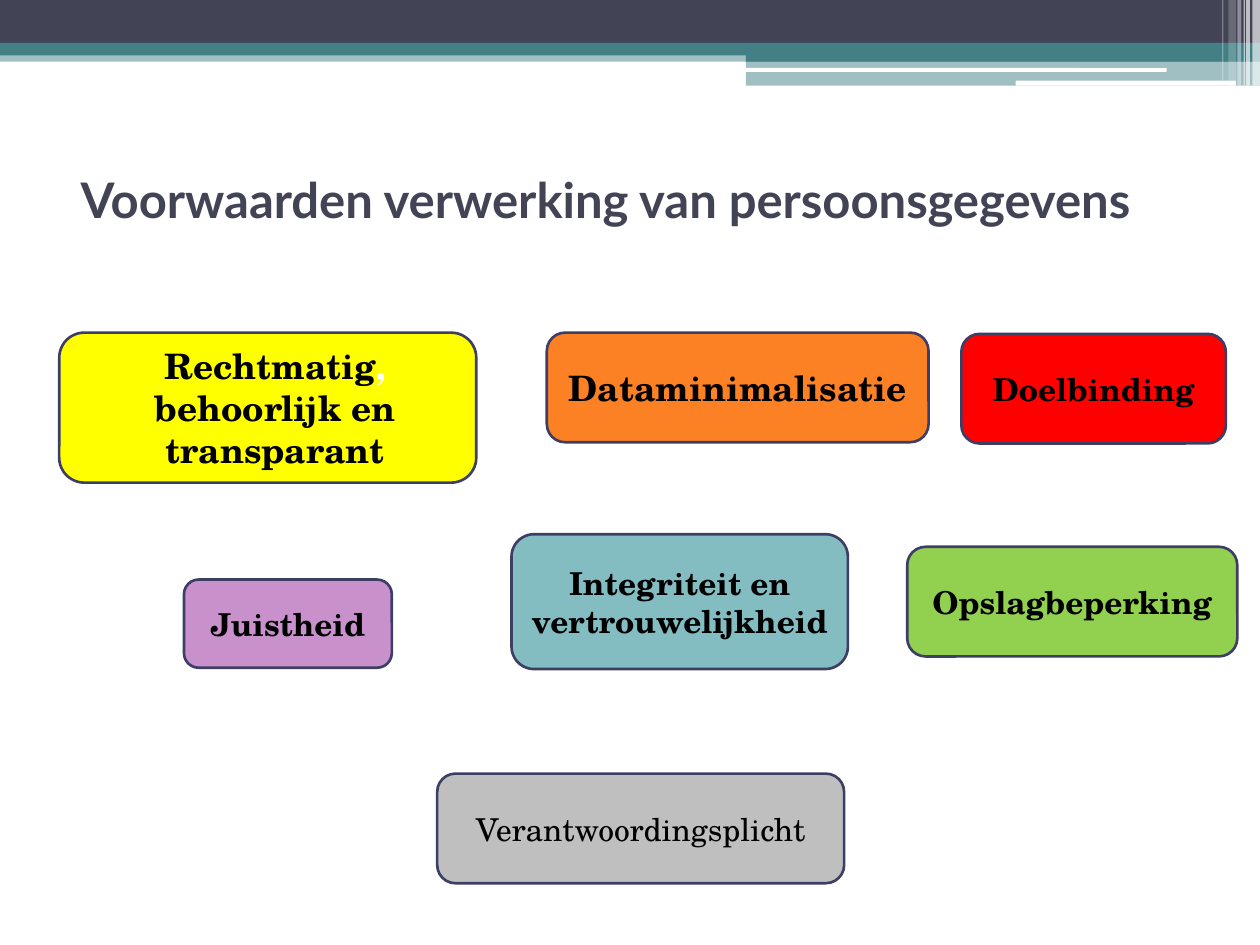
import lxml.etree
import pptx
import pptx.dml.color
import pptx.enum.shapes
import pptx.enum.text
import pptx.oxml.ns
import pptx.util

Inches = pptx.util.Inches
Shapes = pptx.enum.shapes.MSO_SHAPE
qualified = pptx.oxml.ns.qn

THEME = {
    "navy": "424456", "teal": "438086", "white": "FFFFFF", "black": "000000",
    "outline": "3D3E66", "outline_width": 1.5,
    "title_font": "Lato", "body_font": "TeX Gyre Schola",
    "title_size": 28, "large": 20, "medium": 18,
}

TITLE = "Voorwaarden verwerking van persoonsgegevens"
TITLE_BOX = (0.54, 0.99, 9, 1.17)

BANDS = [
    ((0, 0.4, 10, 0.09), "teal", 50),
    ((0, 0, 10, 0.34), "navy", 100),
    ((0, 0.34, 10, 0.1), "teal", 100),
    ((5.92, 0.39, 4.08, 0.1), "teal", 100),
    ((5.92, 0.48, 4.08, 0.2), "teal", 50),
]
WHITE_BARS = [(5.91, 0.54, 3.35, 0.03), (8.06, 0.64, 1.75, 0.04)]
STRIPES = [
    (9.94, 0.06, 0.68, 65), (9.89, 0.03, 0.68, 65), (9.87, 0.01, 0.68, 60),
    (9.82, 0.03, 0.68, 40), (9.75, 0.06, 0.64, 20), (9.7, 0.01, 0.64, 30),
]

MAIN_CONDITION = {
    "box": (0.47, 2.64, 3.31, 1.19), "fill": "FFFF00",
    "runs": [("Rechtmatig", "black"), (", ", "white"), ("behoorlijk en transparant", "black")],
}
CONDITIONS = [
    ("Dataminimalisatie", (4.34, 2.64, 3.03, 0.87), "FC8124", "large", True),
    ("Doelbinding", (7.63, 2.65, 2.1, 0.87), "FF0000", "medium", True),
    ("Integriteit en vertrouwelijkheid", (4.06, 4.24, 2.67, 1.07), "83BCC1", "medium", True),
    ("Opslagbeperking", (7.2, 4.34, 2.62, 0.87), "92D050", "medium", True),
    ("Juistheid", (1.46, 4.6, 1.65, 0.7), "C991CB", "medium", True),
    ("Verantwoordingsplicht", (3.47, 6.14, 3.23, 0.87), "BFBFBF", "medium", False),
]


def rgb(value):
    return pptx.dml.color.RGBColor.from_string(value)


def place(shape, box):
    shape.left, shape.top, shape.width, shape.height = map(Inches, box)


def add_decoration(slide, box, color, opacity=100, geometry=Shapes.RECTANGLE):
    shape = slide.shapes.add_shape(geometry, *map(Inches, box))
    shape.shadow.inherit = False
    shape.fill.solid()
    shape.fill.fore_color.rgb = rgb(THEME[color])
    shape.line.fill.background()
    if opacity < 100:
        color_element = shape.fill._xPr.find(".//" + qualified("a:srgbClr"))
        lxml.etree.SubElement(color_element, qualified("a:alpha"), val=str(opacity * 1000))


def add_run(paragraph, text, font, size, color, bold):
    run = paragraph.add_run()
    run.text = text
    run.font.name = THEME[font]
    run.font.size = pptx.util.Pt(THEME[size])
    run.font.color.rgb = rgb(THEME[color])
    run.font.bold = bold


def format_condition(shape, fill, runs, size, bold):
    shape.fill.solid()
    shape.fill.fore_color.rgb = rgb(fill)
    shape.line.color.rgb = rgb(THEME["outline"])
    shape.line.width = pptx.util.Pt(THEME["outline_width"])
    frame = shape.text_frame
    frame.word_wrap = True
    frame.auto_size = pptx.enum.text.MSO_AUTO_SIZE.NONE
    frame.vertical_anchor = pptx.enum.text.MSO_ANCHOR.MIDDLE
    frame.margin_left = frame.margin_right = Inches(0.08)
    paragraph = frame.paragraphs[0]
    paragraph.alignment = pptx.enum.text.PP_ALIGN.CENTER
    for text, color in runs:
        add_run(paragraph, text, "body_font", size, color, bold)
    return paragraph


def add_title(slide):
    title = slide.shapes.title
    place(title, TITLE_BOX)
    title.text_frame.vertical_anchor = pptx.enum.text.MSO_ANCHOR.MIDDLE
    paragraph = title.text_frame.paragraphs[0]
    paragraph.alignment = pptx.enum.text.PP_ALIGN.LEFT
    add_run(paragraph, TITLE, "title_font", "title_size", "navy", True)


def add_main_condition(slide):
    body = slide.placeholders[1]
    place(body, MAIN_CONDITION["box"])
    geometry = lxml.etree.SubElement(body._element.spPr, qualified("a:prstGeom"), prst="roundRect")
    lxml.etree.SubElement(geometry, qualified("a:avLst"))
    paragraph = format_condition(body, MAIN_CONDITION["fill"], MAIN_CONDITION["runs"], "large", True)
    paragraph.space_before = pptx.util.Pt(3)
    properties = paragraph._p.get_or_add_pPr()
    properties.set("marL", str(Inches(0.12)))
    properties.set("indent", "0")
    lxml.etree.SubElement(properties, qualified("a:buNone"))


def main():
    presentation = pptx.Presentation()
    presentation.slide_width, presentation.slide_height = Inches(10), Inches(7.5)
    slide = presentation.slides.add_slide(presentation.slide_layouts[1])
    for box, color, opacity in BANDS:
        add_decoration(slide, box, color, opacity)
    for box in WHITE_BARS:
        add_decoration(slide, box, "white", geometry=Shapes.ROUNDED_RECTANGLE)
    for left, width, height, opacity in STRIPES:
        add_decoration(slide, (left, 0, width, height), "white", opacity)
    add_title(slide)
    add_main_condition(slide)
    for text, box, fill, size, bold in CONDITIONS:
        shape = slide.shapes.add_shape(Shapes.ROUNDED_RECTANGLE, *map(Inches, box))
        shape.shadow.inherit = False
        format_condition(shape, fill, [(text, "black")], size, bold)
    presentation.save("out.pptx")


if __name__ == "__main__":
    main()
